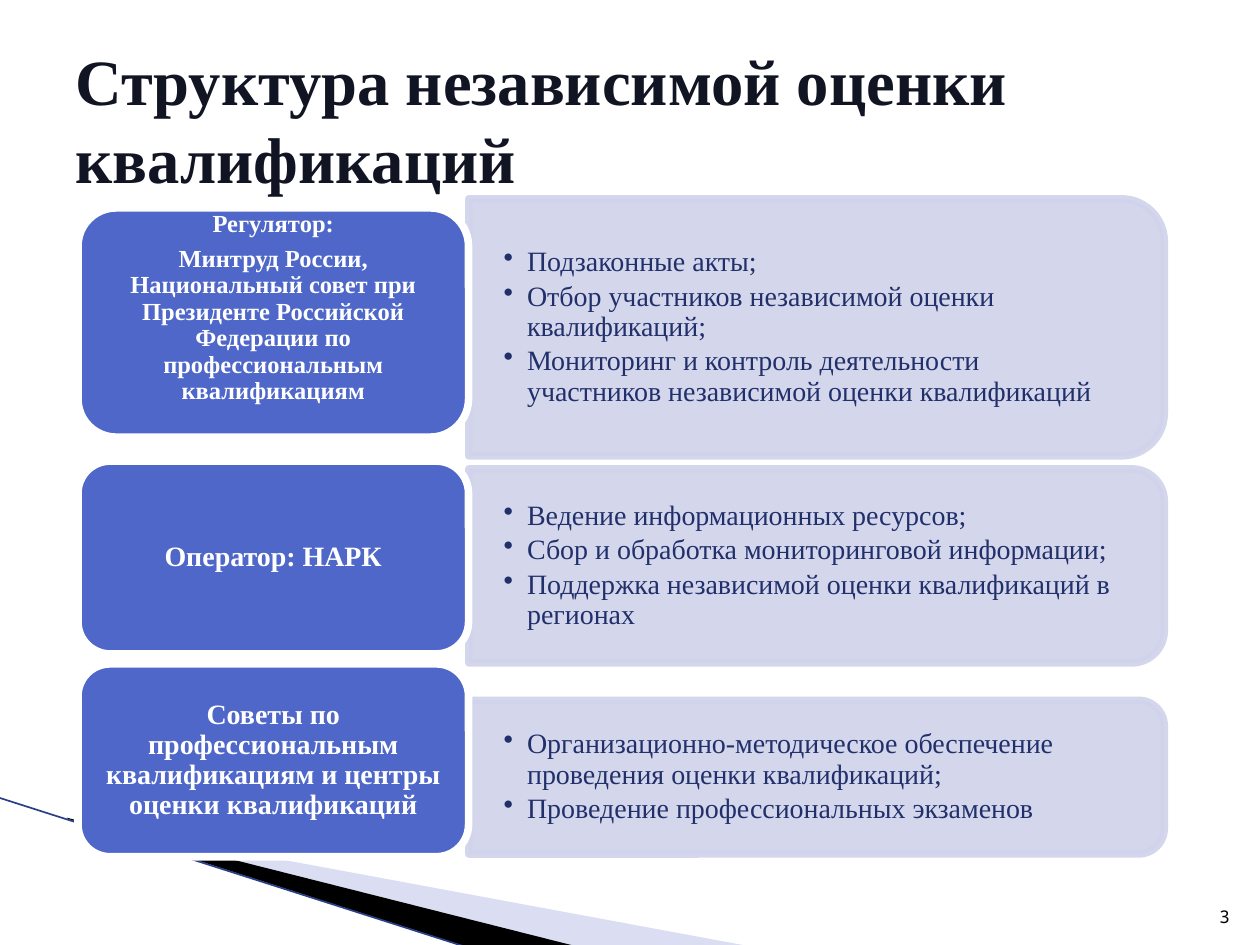
from dataclasses import dataclass

from lxml import etree
from pptx import Presentation
from pptx.dml.color import RGBColor
from pptx.enum import shapes, text
from pptx.oxml import ns
from pptx.util import Pt


@dataclass(frozen=True)
class Theme:
    serif: str = "Times New Roman"
    mono: str = "Noto Sans Mono"
    title: str = "111422"
    role: str = "4E67C8"
    panel: str = "D0D3EB"
    duty: str = "21306A"
    wash: str = "A6AEE1"
    edge: str = "2A3F86"
    white: str = "FFFFFF"
    black: str = "000000"
    title_size: float = 36.9
    body_size: float = 16
    small_size: float = 14
    number_size: float = 10
    outline: float = 4.33


theme = Theme()


def paint(fill, color, opacity=100):
    fill.solid()
    fill.fore_color.rgb = RGBColor.from_string(color)
    if opacity < 100:
        rgb = fill._xPr.find(".//" + ns.qn("a:srgbClr"))
        etree.SubElement(rgb, ns.qn("a:alpha"), val=str(opacity * 1000))


def write(frame, lines, size, color, face=theme.serif, bold=False, align=text.PP_ALIGN.LEFT,
          insets=(7.2, 3.6, 7.2, 3.6), anchor=text.MSO_ANCHOR.MIDDLE,
          spacing=None, gap=0, bullet=False):
    frame.word_wrap = True
    frame.vertical_anchor = anchor
    frame.margin_left, frame.margin_top, frame.margin_right, frame.margin_bottom = map(Pt, insets)
    for index, line in enumerate(lines):
        paragraph = frame.paragraphs[0] if index == 0 else frame.add_paragraph()
        paragraph.text = line
        paragraph.alignment = align
        paragraph.line_spacing = spacing
        paragraph.space_after = Pt(gap)
        if bullet:
            properties = paragraph._p.get_or_add_pPr()
            properties.set("marL", str(Pt(13.5)))
            properties.set("indent", str(-Pt(13.5)))
            etree.SubElement(properties, ns.qn("a:buChar"), char="•")
        font = paragraph.font
        font.name, font.size, font.bold = face, Pt(size), bold
        font.color.rgb = RGBColor.from_string(color)


deck = Presentation()
deck.slide_width, deck.slide_height = Pt(720), Pt(540)
slide = deck.slides.add_slide(deck.slide_layouts[6])
canvas = slide.shapes

# Corner decoration
wedges = [
    ([(39.6, 468.7), (428.4, 540.7), (328.3, 540.7), (39.6, 468)], theme.wash, 40),
    ([(38.2, 467.3), (329, 540.7), (267.8, 541.4), (38.9, 468)], theme.black, 100),
]
for corners, color, opacity in wedges:
    points = [(Pt(x), Pt(y)) for x, y in corners]
    builder = canvas.build_freeform(*points[0], scale=1.0)
    builder.add_line_segments(points[1:], close=True)
    wedge = builder.convert_to_shape()
    wedge.shadow.inherit = False
    paint(wedge.fill, color, opacity)
    wedge.line.fill.background()

edge = canvas.add_connector(shapes.MSO_CONNECTOR.STRAIGHT, Pt(-0.7), Pt(455.8), Pt(267.1), Pt(541.4))
edge.line.width = Pt(0.95)
paint(edge.line.fill, theme.edge)
etree.SubElement(edge._element.spPr, ns.qn("a:effectLst"))

# Title and slide number
heading = canvas.add_textbox(Pt(36), Pt(22.5), Pt(648), Pt(90))
write(heading.text_frame, ["Структура независимой оценки квалификаций"],
      theme.title_size, theme.title, bold=True, spacing=Pt(44.6))
number = canvas.add_textbox(Pt(681), Pt(504.7), Pt(28.8), Pt(28.8))
write(number.text_frame, ["3"], theme.number_size, theme.black, face=theme.mono,
      align=text.PP_ALIGN.RIGHT, anchor=text.MSO_ANCHOR.BOTTOM)

# Rows: role top and height, panel middle and height, role size and bottom inset, texts
rows = [
    (118.8, 131, 187.1, 146.9, theme.small_size, 19,
     ["Регулятор:",
      "Минтруд России, Национальный совет при Президенте Российской Федерации "
      "по профессиональным квалификациям"],
     ["Подзаконные акты;",
      "Отбор участников независимой оценки квалификаций;",
      "Мониторинг и контроль деятельности участников независимой оценки квалификаций"]),
    (263.5, 110.2, 323.4, 110.9, theme.body_size, 2.2,
     ["Оператор: НАРК"],
     ["Ведение информационных ресурсов;",
      "Сбор и обработка мониторинговой информации;",
      "Поддержка независимой оценки квалификаций в регионах"]),
    (379.4, 110.2, 444.1, 87.8, theme.body_size, 2.2,
     ["Советы по профессиональным квалификациям и центры оценки квалификаций"],
     ["Организационно-методическое обеспечение проведения оценки квалификаций;",
      "Проведение профессиональных экзаменов"]),
]
role_left, role_width, panel_left, panel_width = 44.6, 223.2, 267.9, 397.4

for top, height, middle, depth, role_size, bottom, role_lines, duties in rows:
    # Panel is turned so that its rounded corners face right
    panel = canvas.add_shape(
        shapes.MSO_SHAPE.ROUND_2_SAME_RECTANGLE,
        Pt(panel_left + (panel_width - depth) / 2), Pt(middle - panel_width / 2),
        Pt(depth), Pt(panel_width))
    panel.rotation = 90
    panel.shadow.inherit = False
    paint(panel.fill, theme.panel, 90)
    panel.line.width = Pt(theme.outline)
    paint(panel.line.fill, theme.panel, 90)

    duty_box = canvas.add_textbox(Pt(panel_left), Pt(middle - depth / 2),
                                  Pt(panel_width - 5), Pt(depth))
    write(duty_box.text_frame, duties, theme.body_size, theme.duty,
          insets=(19.8, 9.9, 19.8, 9.9), spacing=0.9, gap=2.4, bullet=True)

    role = canvas.add_shape(shapes.MSO_SHAPE.ROUNDED_RECTANGLE,
                            Pt(role_left), Pt(top), Pt(role_width), Pt(height))
    role.shadow.inherit = False
    paint(role.fill, theme.role)
    role.line.width = Pt(theme.outline)
    paint(role.line.fill, theme.white)
    write(role.text_frame, role_lines, role_size, theme.white, bold=True,
          align=text.PP_ALIGN.CENTER, insets=(4.7, 2.2, 4.7, bottom),
          spacing=0.9, gap=role_size * 0.35)

deck.save("out.pptx")
